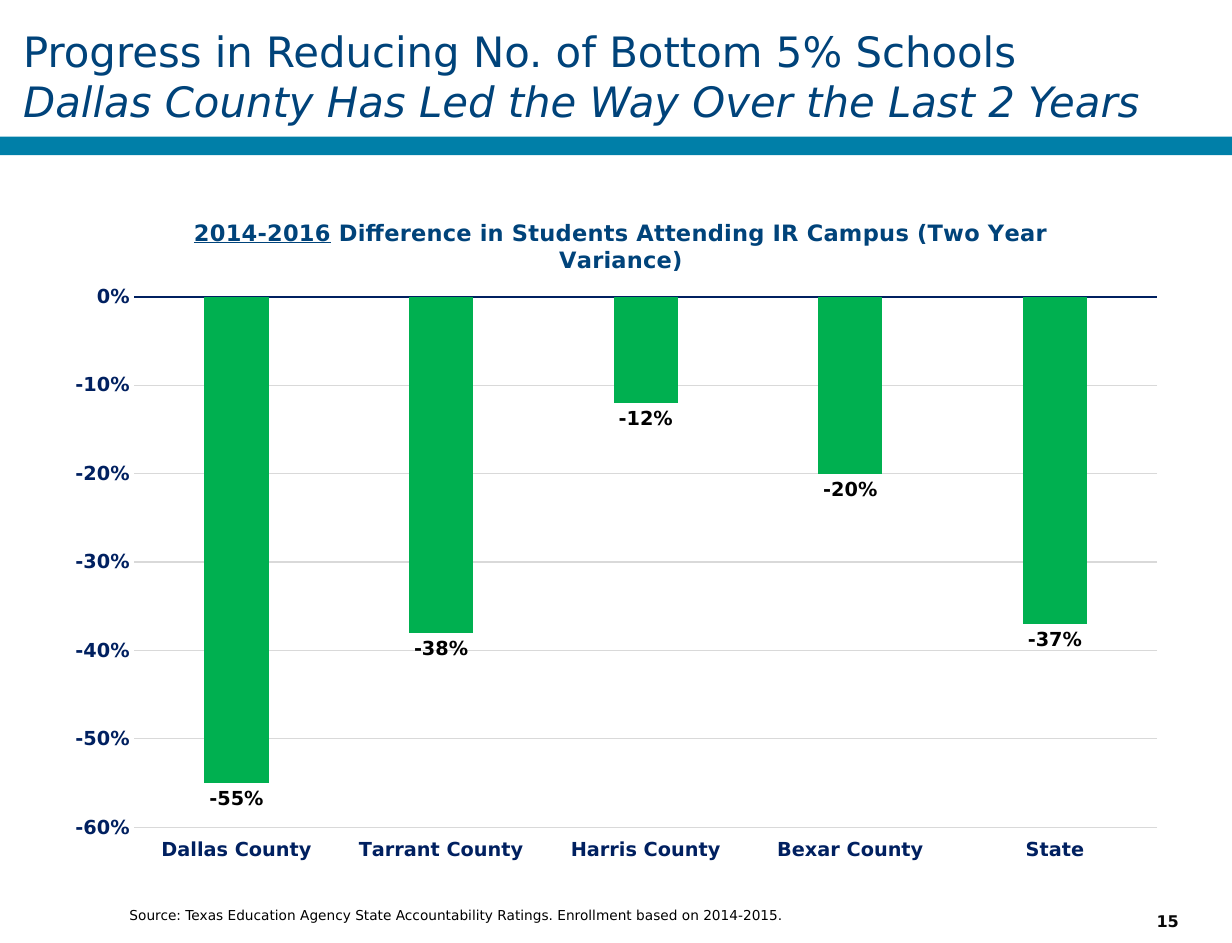
from dataclasses import dataclass

from lxml.etree import SubElement
from pptx import Presentation
from pptx.chart.chart import Chart
from pptx.chart.data import CategoryChartData
from pptx.dml.color import RGBColor
from pptx.enum.chart import XL_CHART_TYPE as ChartType
from pptx.enum.chart import XL_LABEL_POSITION as LabelPosition
from pptx.enum.chart import XL_TICK_LABEL_POSITION as TickLabelPosition
from pptx.enum.chart import XL_TICK_MARK as TickMark
from pptx.enum.shapes import MSO_SHAPE as ShapeType
from pptx.enum.text import MSO_ANCHOR as Anchor
from pptx.enum.text import PP_ALIGN as Align
from pptx.oxml import parse_xml
from pptx.oxml.ns import nsdecls, qn
from pptx.slide import Slide
from pptx.text.text import Font
from pptx.util import Inches, Pt

FONT_NAME = "DejaVu Sans"
COLORS = {
    "title": "00437A",
    "band": "007FA8",
    "axis": "002060",
    "grid": "D9D9D9",
    "bar": "00B050",
    "text": "000000",
    "number": "080808",
}
COUNTY_CHANGES = {
    "Dallas County": -0.55,
    "Tarrant County": -0.38,
    "Harris County": -0.12,
    "Bexar County": -0.20,
    "State": -0.37,
}


@dataclass
class Label:
    text: str
    left: float
    top: float
    width: float
    height: float
    size: float
    color: str
    bold: bool = False
    align: Align = Align.LEFT
    anchor: Anchor = Anchor.TOP
    wrap: bool = True
    margins: tuple[float, float] = (0.1, 0.05)


LABELS = [
    Label("Source: Texas Education Agency State Accountability Ratings. "
          "Enrollment based on 2014-2015.", 1.02, 7.78, 8.63, 0.24, 8.5, "text"),
    Label("15", 9.91, 7.9, 0.35, 0.1, 10, "number", True,
          Align.CENTER, Anchor.MIDDLE, False, (0, 0)),
]


def style_font(font: Font, size: float, color: str, bold: bool = False) -> None:
    font.name = FONT_NAME
    font.size = Pt(size)
    font.bold = bold
    font.color.rgb = RGBColor.from_string(COLORS[color])


def add_label(slide: Slide, label: Label) -> None:
    box = slide.shapes.add_textbox(Inches(label.left), Inches(label.top),
                                   Inches(label.width), Inches(label.height))
    frame = box.text_frame
    frame.word_wrap = label.wrap
    frame.vertical_anchor = label.anchor
    frame.margin_left = frame.margin_right = Inches(label.margins[0])
    frame.margin_top = frame.margin_bottom = Inches(label.margins[1])
    paragraph = frame.paragraphs[0]
    paragraph.text = label.text
    paragraph.alignment = label.align
    style_font(paragraph.font, label.size, label.color, label.bold)


def add_band(slide: Slide) -> None:
    band = slide.shapes.add_shape(ShapeType.RECTANGLE, 0, Inches(1.18),
                                  Inches(10.64), Inches(0.16))
    band.shadow.inherit = False
    band.fill.solid()
    band.fill.fore_color.rgb = RGBColor.from_string(COLORS["band"])
    band.line.fill.background()


def format_title(slide: Slide) -> None:
    title = slide.shapes.title
    title.left, title.top = Inches(0.2), Inches(0.16)
    title.width, title.height = Inches(10.28), Inches(0.99)
    frame = title.text_frame
    frame.word_wrap = True
    frame.vertical_anchor = Anchor.MIDDLE
    frame.margin_left = frame.margin_top = frame.margin_bottom = 0
    frame.margin_right = Inches(0.08)
    paragraph = frame.paragraphs[0]
    paragraph.alignment = Align.LEFT
    style_font(paragraph.font, 26, "title")
    paragraph.add_run().text = "Progress in Reducing No. of Bottom 5% Schools"
    paragraph.add_line_break()
    subtitle = paragraph.add_run()
    subtitle.text = "Dallas County Has Led the Way Over the Last 2 Years"
    subtitle.font.italic = True


def manual_layout(**settings: str | float):
    layout = parse_xml(f"<c:layout {nsdecls('c')}><c:manualLayout/></c:layout>")
    for tag, value in settings.items():
        SubElement(layout[0], qn(f"c:{tag}")).set("val", str(value))
    return layout


def format_chart_title(chart: Chart) -> None:
    chart.has_title = True
    chart_title = chart.chart_title
    paragraph = chart_title.text_frame.paragraphs[0]
    style_font(paragraph.font, 14, "title", True)
    period = paragraph.add_run()
    period.text = "2014-2016"
    period.font.underline = True
    paragraph.add_run().text = (
        " Difference in Students Attending IR Campus (Two Year Variance)")
    chart_title.include_in_layout = False
    title_element = chart_title._element
    for layout in title_element.findall(qn("c:layout")):
        title_element.remove(layout)
    title_element.find(qn("c:tx")).addnext(
        manual_layout(xMode="edge", yMode="edge", x=0.12, y=0.04))


def format_axes(chart: Chart) -> None:
    for axis in (chart.category_axis, chart.value_axis):
        axis.major_tick_mark = axis.minor_tick_mark = TickMark.NONE
        style_font(axis.tick_labels.font, 12, "axis", True)
    category_axis, value_axis = chart.category_axis, chart.value_axis
    category_axis.tick_label_position = TickLabelPosition.LOW
    category_axis.format.line.color.rgb = RGBColor.from_string(COLORS["axis"])
    category_axis.format.line.width = Pt(1.25)
    value_axis.minimum_scale, value_axis.maximum_scale = -0.6, 0
    value_axis.major_unit = 0.1
    value_axis.tick_labels.number_format = "0%"
    value_axis.tick_labels.number_format_is_linked = False
    value_axis.format.line.fill.background()
    grid_line = value_axis.major_gridlines.format.line
    grid_line.color.rgb = RGBColor.from_string(COLORS["grid"])
    grid_line.width = Pt(0.75)


def format_bars(chart: Chart) -> None:
    plot = chart.plots[0]
    plot.gap_width, plot.overlap = 219, -27
    plot.vary_by_categories = False
    series = plot.series[0]
    series.invert_if_negative = False
    series.format.fill.solid()
    series.format.fill.fore_color.rgb = RGBColor.from_string(COLORS["bar"])
    labels = series.data_labels
    labels.show_value = True
    labels.position = LabelPosition.OUTSIDE_END
    labels.number_format = "0%"
    labels.number_format_is_linked = False
    style_font(labels.font, 12, "text", True)


def add_county_chart(slide: Slide) -> None:
    data = CategoryChartData(number_format="0%")
    data.categories = list(COUNTY_CHANGES)
    data.add_series("Series 1", list(COUNTY_CHANGES.values()))
    chart = slide.shapes.add_chart(
        ChartType.COLUMN_CLUSTERED, Inches(0.48), Inches(1.61),
        Inches(9.71), Inches(5.95), data).chart
    chart.has_legend = False
    style_font(chart.font, 10, "text")
    format_chart_title(chart)
    format_axes(chart)
    format_bars(chart)
    plot_area = chart._chartSpace.chart.plotArea
    for layout in plot_area.findall(qn("c:layout")):
        plot_area.remove(layout)
    plot_area.insert(0, manual_layout(layoutTarget="inner", xMode="edge",
                                      yMode="edge", x=0.07, y=0.16, w=0.91, h=0.77))


def main() -> None:
    presentation = Presentation()
    presentation.slide_width = Inches(10.64)
    presentation.slide_height = Inches(8.14)
    slide = presentation.slides.add_slide(presentation.slide_layouts[5])
    add_band(slide)
    format_title(slide)
    add_county_chart(slide)
    for label in LABELS:
        add_label(slide, label)
    presentation.save("out.pptx")


if __name__ == "__main__":
    main()
